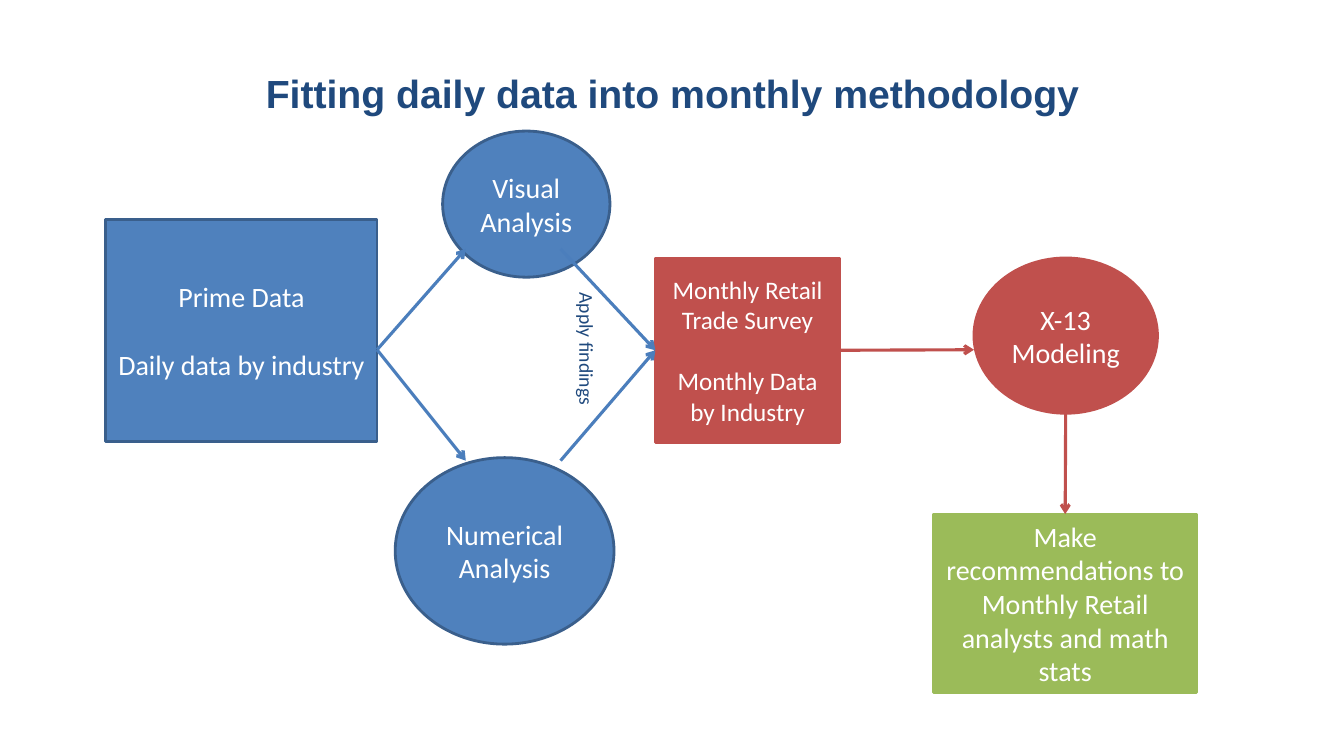
from dataclasses import dataclass

from lxml import etree
from pptx import Presentation
from pptx.dml.color import RGBColor
from pptx.enum.shapes import MSO_CONNECTOR, MSO_SHAPE
from pptx.enum.text import MSO_ANCHOR, MSO_AUTO_SIZE, PP_ALIGN
from pptx.oxml.ns import qn
from pptx.util import Inches, Pt

RECT, OVAL = MSO_SHAPE.RECTANGLE, MSO_SHAPE.OVAL
STRAIGHT = MSO_CONNECTOR.STRAIGHT
MIDDLE = MSO_ANCHOR.MIDDLE
CENTER = PP_ALIGN.CENTER
FIT_SHAPE = MSO_AUTO_SIZE.SHAPE_TO_FIT_TEXT
LEFT, RIGHT, TOP = 1, 3, 0


@dataclass(frozen=True)
class Theme:
    navy: str = "1F497D"
    blue: str = "4F81BD"
    blue_edge: str = "3A5F8C"
    blue_arrow: str = "4B7EBC"
    red: str = "C0504D"
    green: str = "9BBB59"
    white: str = "FFFFFF"
    heading_font: str = "Arial"
    body_font: str = "Calibri"
    title: int = 28
    body: int = 20
    survey: int = 18
    label: int = 14


T = Theme()


def write(tf, *lines, size=T.body, color=T.white, font=T.body_font, bold=False, gap=0):
    tf.word_wrap = True
    for i, line in enumerate(lines):
        p = tf.add_paragraph() if i else tf.paragraphs[0]
        p.alignment = CENTER
        if i:
            p.space_before = Pt(gap)
        r = p.add_run()
        r.text = line
        r.font.size = Pt(size)
        r.font.name = font
        r.font.bold = bold
        r.font.color.rgb = RGBColor.from_string(color)


prs = Presentation()
prs.slide_width, prs.slide_height = Inches(13.33), Inches(7.5)
s = prs.slides.add_slide(prs.slide_layouts[5])

title = s.shapes.title
title.left, title.top, title.width, title.height = map(Inches, (0.67, 0.3, 12, 1.25))
title.text_frame.vertical_anchor = MIDDLE
write(title.text_frame, "Fitting daily data into monthly methodology",
      size=T.title, color=T.navy, font=T.heading_font, bold=True)

steps = [
    ("daily", RECT, (1.05, 2.18, 2.69, 2.2), T.blue, T.blue_edge, T.body,
     ["Prime Data", "Daily data by industry"]),
    ("visual", OVAL, (4.39, 1.3, 1.66, 1.45), T.blue, T.blue_edge, T.body,
     ["Visual Analysis"]),
    ("numerical", OVAL, (3.92, 4.54, 2.17, 1.85), T.blue, T.blue_edge, T.body,
     ["Numerical Analysis"]),
    ("survey", RECT, (6.5, 2.56, 1.83, 1.83), T.red, T.red, T.survey,
     ["Monthly Retail Trade Survey", "Monthly Data by Industry"]),
    ("modeling", OVAL, (9.66, 2.56, 1.82, 1.54), T.red, T.red, T.body,
     ["X-13 Modeling"]),
    ("advice", RECT, (9.26, 5.1, 2.61, 1.77), T.green, T.green, T.body,
     ["Make recommendations to Monthly Retail analysts and math stats"]),
]
boxes = {}
for name, kind, at, fill, edge, size, lines in steps:
    sp = s.shapes.add_shape(kind, *map(Inches, at))
    sp.shadow.inherit = False
    sp.fill.solid()
    sp.fill.fore_color.rgb = RGBColor.from_string(fill)
    sp.line.color.rgb = RGBColor.from_string(edge)
    sp.line.width = Pt(2)
    sp.text_frame.vertical_anchor = MIDDLE
    write(sp.text_frame, *lines, size=size, gap=size * 1.22)
    boxes[name] = sp

label = s.shapes.add_textbox(Inches(5.11), Inches(3.29), Inches(1.42), Inches(0.34))
label.rotation = 90
label.text_frame.auto_size = FIT_SHAPE
write(label.text_frame, "Apply findings", size=T.label, color=T.navy)

arrows = [
    ((3.74, 3.47), (4.62, 2.47), T.blue_arrow, None, None),
    ((3.74, 3.47), (4.62, 4.57), T.blue_arrow, None, None),
    ((5.56, 2.47), (6.5, 3.47), T.blue_arrow, None, ("survey", LEFT)),
    ((5.56, 4.57), (6.5, 3.47), T.blue_arrow, None, ("survey", LEFT)),
    ((8.33, 3.47), (9.66, 3.47), T.red, ("survey", RIGHT), None),
    ((10.57, 4.03), (10.57, 5.1), T.red, None, ("advice", TOP)),
]
for start, end, color, source, target in arrows:
    c = s.shapes.add_connector(STRAIGHT, *map(Inches, start + end))
    if source:
        c.begin_connect(boxes[source[0]], source[1])
    if target:
        c.end_connect(boxes[target[0]], target[1])
    c.line.color.rgb = RGBColor.from_string(color)
    c.line.width = Pt(2.25)
    etree.SubElement(c.line._get_or_add_ln(), qn("a:tailEnd"), type="arrow")
    etree.SubElement(c._element.spPr, qn("a:effectLst"))

prs.save("out.pptx")
